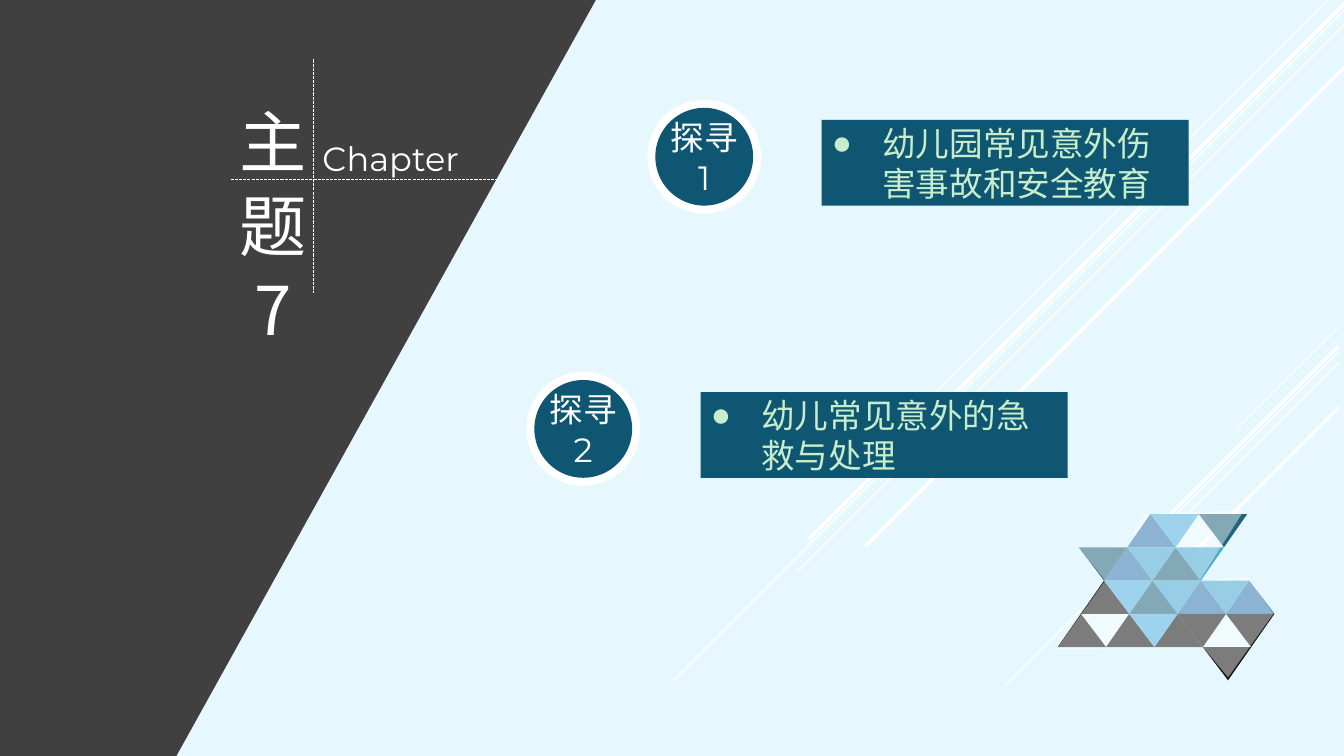
from lxml.etree import SubElement
from pptx import Presentation
from pptx.dml.color import RGBColor
from pptx.enum.dml import MSO_LINE
from pptx.enum.shapes import MSO_CONNECTOR, MSO_SHAPE
from pptx.enum.text import MSO_ANCHOR, MSO_AUTO_SIZE, PP_ALIGN
from pptx.oxml.ns import qn
from pptx.util import Inches, Pt

WHITE = RGBColor(0xFF, 0xFF, 0xFF)
BLACK = RGBColor(0x00, 0x00, 0x00)
PALE = RGBColor(0xE4, 0xF8, 0xFD)
CHARCOAL = RGBColor(0x40, 0x40, 0x40)
MINT = RGBColor(0xC7, 0xED, 0xCC)
TEAL = RGBColor(0x0E, 0x56, 0x71)
BLUE = RGBColor(0x1F, 0x6B, 0xA5)
SKY = RGBColor(0x40, 0xAB, 0xDB)
CYAN = RGBColor(0x34, 0x9F, 0xCD)

LATIN_FONT = "Montserrat"
TITLE_FONT = "Noto Sans CJK SC"
LIST_FONT = "Noto Sans CJK JP"

# Diagonal strokes: start x, start y, horizontal run, width
LOWER_STROKES = [(13.28, 3.24, 1.02, 0.75), (13.28, 3.49, 3.32, 0.75),
                 (13.28, 3.6, 2.11, 0.75), (13.28, 3.43, 1.95, 2.25),
                 (13.28, 4.04, 1.42, 2.25)]
UPPER_STROKES = [(13.16, 0.01, 4.16, 1), (13.33, 0.1, 6.65, 1),
                 (13.33, 0.25, 5.42, 1), (13.33, 0.04, 5.31, 2.5),
                 (13.33, 0.67, 4.75, 2.5)]

# Mosaic triangles as (half column, row) of the apex or the left corner
POINTING_UP = {BLUE: [(4, 0), (3, 1), (8, 2), (6, 2)],
               TEAL: [(5, 1), (4, 2)],
               BLACK: [(5, 3), (2, 2), (1, 3), (3, 3)]}
POINTING_DOWN = {TEAL: [(6, 0), (1, 1)],
                 SKY: [(4, 0), (2, 2), (3, 3)],
                 CYAN: [(5, 1), (3, 1), (6, 2), (4, 2)],
                 BLACK: [(7, 3), (5, 3), (6, 4)]}

MOSAIC_VEIL = [(11.18, 5.42), (11.35, 5.1), (12.34, 5.06), (11.9, 5.76),
               (12.37, 5.72), (12.63, 6.09), (12.18, 6.72), (11.94, 6.43),
               (10.48, 6.44), (10.96, 5.76), (10.7, 5.43)]

# Topics: label, text, left and top of the white ring
TOPICS = [("探寻1", "幼儿园常见意外伤害事故和安全教育", 6.42, 0.99),
          ("探寻2", "幼儿常见意外的急救与处理", 5.22, 3.69)]


def mosaic_point(column, row):
    return 10.45 + 0.24 * column + 0.01 * row, 5.1 + 0.33 * row


class ChapterSlide:
    def __init__(self, presentation):
        self.slide = presentation.slides.add_slide(presentation.slide_layouts[3])
        self.shapes = self.slide.shapes
        background = self.slide.background.fill
        background.solid()
        background.fore_color.rgb = PALE

    def paint(self, shape, color, opacity=100):
        shape.shadow.inherit = False
        shape.fill.solid()
        shape.fill.fore_color.rgb = color
        shape.line.fill.background()
        if opacity < 100:
            color_element = shape.element.spPr.find(qn("a:solidFill"))[0]
            SubElement(color_element, qn("a:alpha"), val=str(opacity * 1000))

    def line(self, start, end, width, dashed=False):
        connector = self.shapes.add_connector(
            MSO_CONNECTOR.STRAIGHT, *[Inches(value) for value in start + end])
        connector.line.color.rgb = WHITE
        connector.line.width = Pt(width)
        if dashed:
            connector.line.dash_style = MSO_LINE.SQUARE_DOT
        SubElement(connector.element.spPr, qn("a:effectLst"))

    def strokes(self, strokes):
        for x, y, run, width in strokes:
            self.line((x, y), (x - run, y + run), width)

    def polygon(self, points, color, opacity=100):
        corners = [(Inches(x), Inches(y)) for x, y in points]
        builder = self.shapes.build_freeform(*corners[0])
        builder.add_line_segments(corners[1:], close=True)
        self.paint(builder.convert_to_shape(), color, opacity)

    def preset(self, kind, left, top, width, height, color, opacity=100):
        shape = self.shapes.add_shape(
            kind, Inches(left), Inches(top), Inches(width), Inches(height))
        self.paint(shape, color, opacity)
        return shape

    def set_text(self, shape, text, font, size, color, alignment, anchor, spacing=None):
        frame = shape.text_frame
        frame.text = text
        frame.word_wrap = True
        frame.auto_size = MSO_AUTO_SIZE.NONE
        frame.vertical_anchor = anchor
        for paragraph in frame.paragraphs:
            paragraph.alignment = alignment
            paragraph.space_before = Pt(0)
            if spacing:
                paragraph.line_spacing = Pt(spacing)
            for run in paragraph.runs:
                run.font.size = Pt(size)
                run.font.name = font
                run.font.color.rgb = color
                SubElement(run.font._element, qn("a:ea"), typeface=font)

    def place(self, placeholder, left, top, width, height):
        """Position a placeholder and bring it to the front."""
        placeholder.left, placeholder.top = Inches(left), Inches(top)
        placeholder.width, placeholder.height = Inches(width), Inches(height)
        placeholder.element.getparent().append(placeholder.element)

    def title(self, text, *box):
        title = self.shapes.title
        self.place(title, *box)
        self.set_text(title, text, TITLE_FONT, 48, WHITE, PP_ALIGN.CENTER,
                      MSO_ANCHOR.TOP, 60)

    def caption(self, text, *box):
        caption = self.shapes.add_textbox(*[Inches(value) for value in box])
        self.set_text(caption, text, LATIN_FONT, 24, WHITE, PP_ALIGN.JUSTIFY,
                      MSO_ANCHOR.TOP)

    def topic(self, placeholder, label, text, left, top):
        self.preset(MSO_SHAPE.OVAL, left, top, 1.13, 1.13, WHITE)
        badge = self.preset(MSO_SHAPE.OVAL, left + 0.08, top + 0.08, 0.97, 0.97, TEAL)
        frame = badge.text_frame
        frame.margin_left = frame.margin_right = 0
        frame.margin_top = frame.margin_bottom = 0
        self.set_text(badge, label, LATIN_FONT, 24, WHITE, PP_ALIGN.CENTER,
                      MSO_ANCHOR.MIDDLE, 29)

        self.place(placeholder, left + 1.73, top + 0.2, 3.64, 0.85)
        placeholder.fill.solid()
        placeholder.fill.fore_color.rgb = TEAL
        self.set_text(placeholder, text, LIST_FONT, 24, MINT, PP_ALIGN.LEFT,
                      MSO_ANCHOR.MIDDLE, 29)
        properties = placeholder.text_frame.paragraphs[0]._p.get_or_add_pPr()
        properties.set("marL", str(Inches(0.5)))
        properties.set("indent", str(-Inches(0.5)))
        SubElement(properties, qn("a:buChar"), char="●")


def main():
    presentation = Presentation()
    presentation.slide_width = Inches(13.33)
    presentation.slide_height = Inches(7.5)
    chapter = ChapterSlide(presentation)

    # Background strokes and triangle mosaic
    chapter.strokes(LOWER_STROKES)
    for triangles, offsets in [(POINTING_UP, [(0, 0), (1, 1), (-1, 1)]),
                               (POINTING_DOWN, [(0, 0), (2, 0), (1, 1)])]:
        for color, cells in triangles.items():
            for column, row in cells:
                chapter.polygon([mosaic_point(column + right, row + down)
                                 for right, down in offsets], color)
    chapter.strokes(UPPER_STROKES)

    # Translucent veils
    chapter.preset(MSO_SHAPE.RECTANGLE, 0, 0, 13.33, 7.5, WHITE, 9)
    chapter.polygon(MOSAIC_VEIL, WHITE, 44)

    # Chapter heading on the dark panel
    chapter.polygon([(0, 0), (5.91, 0), (1.75, 7.5), (0, 7.5)], CHARCOAL)
    chapter.caption("Chapter", 3.1, 1.32, 1.98, 0.5)
    chapter.title("主题\n7", 1.97, 0.91, 1.47, 2.52)
    chapter.line((2.29, 1.78), (4.95, 1.78), 0.75, dashed=True)
    chapter.line((3.11, 0.59), (3.11, 2.91), 0.75, dashed=True)

    # Topics
    bodies = [shape for shape in chapter.slide.placeholders
              if shape.placeholder_format.idx > 0]
    for body, topic in zip(bodies, TOPICS):
        chapter.topic(body, *topic)

    presentation.save("out.pptx")


if __name__ == "__main__":
    main()
